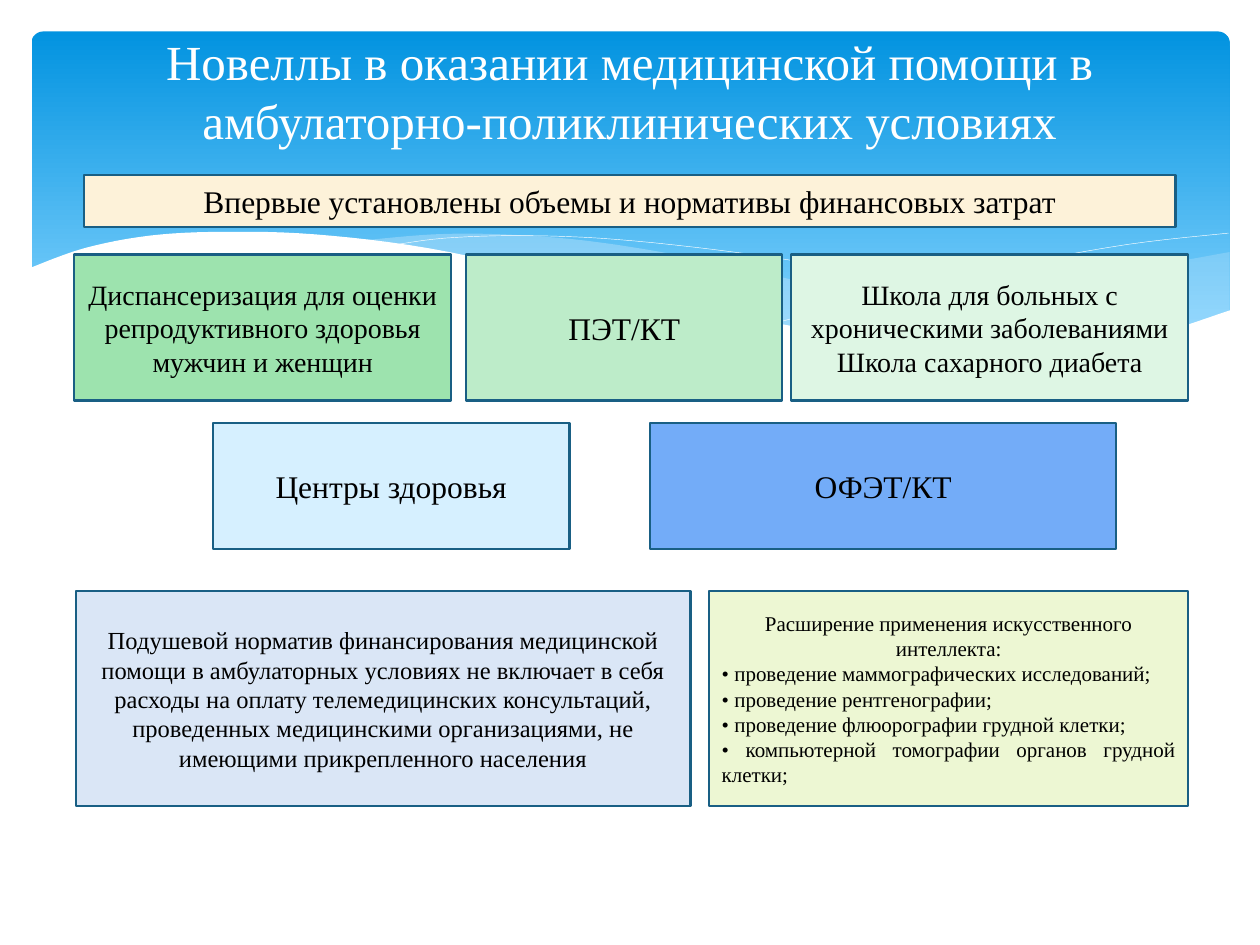
from lxml.etree import SubElement
from pptx import Presentation
from pptx.dml.color import RGBColor
from pptx.enum.dml import MSO_FILL
from pptx.enum.shapes import MSO_SHAPE
from pptx.enum.text import MSO_ANCHOR, PP_ALIGN
from pptx.oxml.ns import qn
from pptx.util import Inches, Pt

COLOURS = {
    "band_top": "0293E0", "band_bottom": "83D3FE", "wave": "C6E7FC",
    "white": "FFFFFF", "black": "000000", "border": "195F84",
    "cream": "FDF2D9", "green": "9DE3AE", "light_green": "BDECC9",
    "pale_green": "DEF6E4", "pale_blue": "D6F0FF", "blue": "73ACF8",
    "grey_blue": "DAE6F6", "lime": "EDF7D3",
}
FONT = "Times New Roman"
COLUMNS, ROWS = 100, 75
CELL = Inches(0.1)
CENTER, JUSTIFY = PP_ALIGN.CENTER, PP_ALIGN.JUSTIFY

RIGHT_WAVE = (
    [(95.1, 17.5), (88.1, 18.8), (83.6, 19.8), (75.4, 21.7), (63.6, 24)],
    [(63.6, 24), (72, 25), (78.9, 25.3), (84.7, 24.9), (90.3, 23.8), (95.1, 22.2)],
)
MIDDLE_WAVE = (
    [(86.8, 24.8), (78.2, 23.5), (68.1, 21.5), (60.4, 19.7), (51.6, 17.8),
     (44, 16.6), (37.4, 16.1), (31.9, 16.1), (26.1, 16.6)],
    [(26.1, 16.6), (33.7, 17.8), (42.4, 19.7), (54.1, 22.3), (64, 24.1),
     (73.6, 25.1), (80.3, 25.3), (86.8, 24.8)],
)
THIN_LINES = (
    [(28.4, 17), (32.8, 16.4), (39.1, 16.2), (46.4, 16.5), (55.7, 17.5),
     (64, 18.8), (73.5, 20.8), (88.2, 24.7)],
    [(58.8, 23.2), (69.5, 20.4), (78.1, 18.5), (87, 16.9), (95, 16)],
)
WHITE_WAVE = (
    [(95.2, 22.1), (88.5, 24.2), (81.2, 25.2), (73.6, 25), (64.3, 24),
     (53, 22), (42.2, 19.5), (31.5, 17.2), (22.5, 16.1), (15.2, 15.9),
     (9.4, 16.2), (4.2, 17.2), (-0.2, 18.8)],
    [(-0.2, 30.4), (95.2, 30.4)],
)


def colour(name):
    """Return the named colour."""
    return RGBColor.from_string(COLOURS[name])


def place(box):
    """Turn columns and rows into slide lengths."""
    return [round(length * CELL) for length in box]


def smooth(knots, steps=6):
    """Return points of a Catmull-Rom curve through the knots."""
    if len(knots) < 3:
        return knots
    padded = [knots[0], *knots, knots[-1]]
    points = [knots[0]]
    for a, b, c, d in zip(padded, padded[1:], padded[2:], padded[3:]):
        for step in range(1, steps + 1):
            t = step / steps
            points.append(tuple(
                0.5 * (2 * q + (r - p) * t + (2 * p - 5 * q + 4 * r - s) * t**2
                       + (3 * q - p - 3 * r + s) * t**3)
                for p, q, r, s in zip(a, b, c, d)))
    return points


def add_curve(page, box, edges, fill=None, opacity=100):
    """Draw a filled wave, or a thin white line when there is no fill."""
    points = [place((box[0] + x, box[1] + y)) for edge in edges for x, y in smooth(edge)]
    builder = page.shapes.build_freeform(*points[0])
    builder.add_line_segments(points[1:], close=fill is not None)
    curve = builder.convert_to_shape()
    curve.shadow.inherit = False
    if fill is None:
        curve.fill.background()
        curve.line.color.rgb = colour("white")
        curve.line.width = Pt(0.25)
        return
    curve.line.fill.background()
    curve.fill.solid()
    curve.fill.fore_color.rgb = colour(fill)
    if opacity < 100 and curve.fill.type == MSO_FILL.SOLID:
        tint = curve.element.spPr.find(qn("a:solidFill"))[0]
        SubElement(tint, qn("a:alpha"), val=str(opacity * 1000))


def add_band(page, box):
    """Draw the gradient header band with its waves."""
    band = page.shapes.add_shape(MSO_SHAPE.ROUNDED_RECTANGLE, *place(box))
    band.adjustments[0] = 0.034
    band.shadow.inherit = False
    band.line.fill.background()
    band.fill.gradient()
    band.fill.gradient_angle = 270
    stops = zip(band.fill.gradient_stops, ("band_top", "band_bottom"), (0, 0.9))
    for stop, name, position in stops:
        stop.color.rgb = colour(name)
        stop.position = position
    add_curve(page, box, RIGHT_WAVE, "wave", 29)
    add_curve(page, box, MIDDLE_WAVE, "wave", 40)
    for line in THIN_LINES:
        add_curve(page, box, [line])
    add_curve(page, box, WHITE_WAVE, "white")


def write(shape, lines, size, ink, rest=CENTER):
    """Write the lines, the first centred and the others aligned as given."""
    frame = shape.text_frame
    frame.word_wrap = True
    frame.vertical_anchor = MSO_ANCHOR.MIDDLE
    for index, line in enumerate(lines):
        para = frame.add_paragraph() if index else frame.paragraphs[0]
        para.alignment = rest if index else CENTER
        span = para.add_run()
        span.text = line
        span.font.name = FONT
        span.font.size = Pt(size)
        span.font.color.rgb = colour(ink)


def add_title(page, box, text):
    """Place the slide title."""
    write(page.shapes.add_textbox(*place(box)), [text], 28, "white")


def add_card(page, box, fill, size, lines, rest=CENTER):
    """Place one bordered card with its text."""
    card = page.shapes.add_shape(MSO_SHAPE.RECTANGLE, *place(box))
    card.shadow.inherit = False
    card.fill.solid()
    card.fill.fore_color.rgb = colour(fill)
    card.line.color.rgb = colour("border")
    card.line.width = Pt(1.25)
    write(card, lines, size, "black", rest)


def add_card_row(page, top, height, cards):
    """Place cards side by side, each with its own left edge and width."""
    for left, width, *content in cards:
        add_card(page, (left, top, width, height), *content)


def main():
    """Build and save the slide."""
    deck = Presentation()
    deck.slide_width, deck.slide_height = place((COLUMNS, ROWS))
    page = deck.slides.add_slide(deck.slide_layouts[6])
    add_band(page, (2.5, 2.5, 95.1, 27))
    add_title(page, (5, 2.1, 89.9, 10.2),
              "Новеллы в оказании медицинской помощи в амбулаторно-поликлинических условиях")
    add_card_row(page, 13.9, 4.1, [
        (6.7, 86.6, "cream", 18, ["Впервые установлены объемы и нормативы финансовых затрат"]),
    ])
    add_card_row(page, 20.2, 11.6, [
        (5.9, 29.9, "green", 16,
         ["Диспансеризация для оценки репродуктивного здоровья мужчин и женщин"]),
        (37, 25.1, "light_green", 18, ["ПЭТ/КТ"]),
        (62.8, 31.5, "pale_green", 16,
         ["Школа для больных с хроническими заболеваниями", "Школа сахарного диабета"]),
    ])
    add_card_row(page, 33.6, 10, [
        (16.9, 28.3, "pale_blue", 18, ["Центры здоровья"]),
        (51.6, 37, "blue", 18, ["ОФЭТ/КТ"]),
    ])
    add_card_row(page, 46.9, 17.1, [
        (6, 48.8, "grey_blue", 14,
         ["Подушевой норматив финансирования медицинской",
          "помощи в амбулаторных условиях не включает в себя",
          "расходы на оплату телемедицинских консультаций,",
          "проведенных медицинскими организациями, не",
          "имеющими прикрепленного населения"]),
        (56.3, 38, "lime", 12,
         ["Расширение применения искусственного интеллекта:",
          "• проведение маммографических исследований;",
          "• проведение рентгенографии;",
          "• проведение флюорографии грудной клетки;",
          "• компьютерной томографии органов грудной клетки;"], JUSTIFY),
    ])
    deck.save("out.pptx")


if __name__ == "__main__":
    main()
